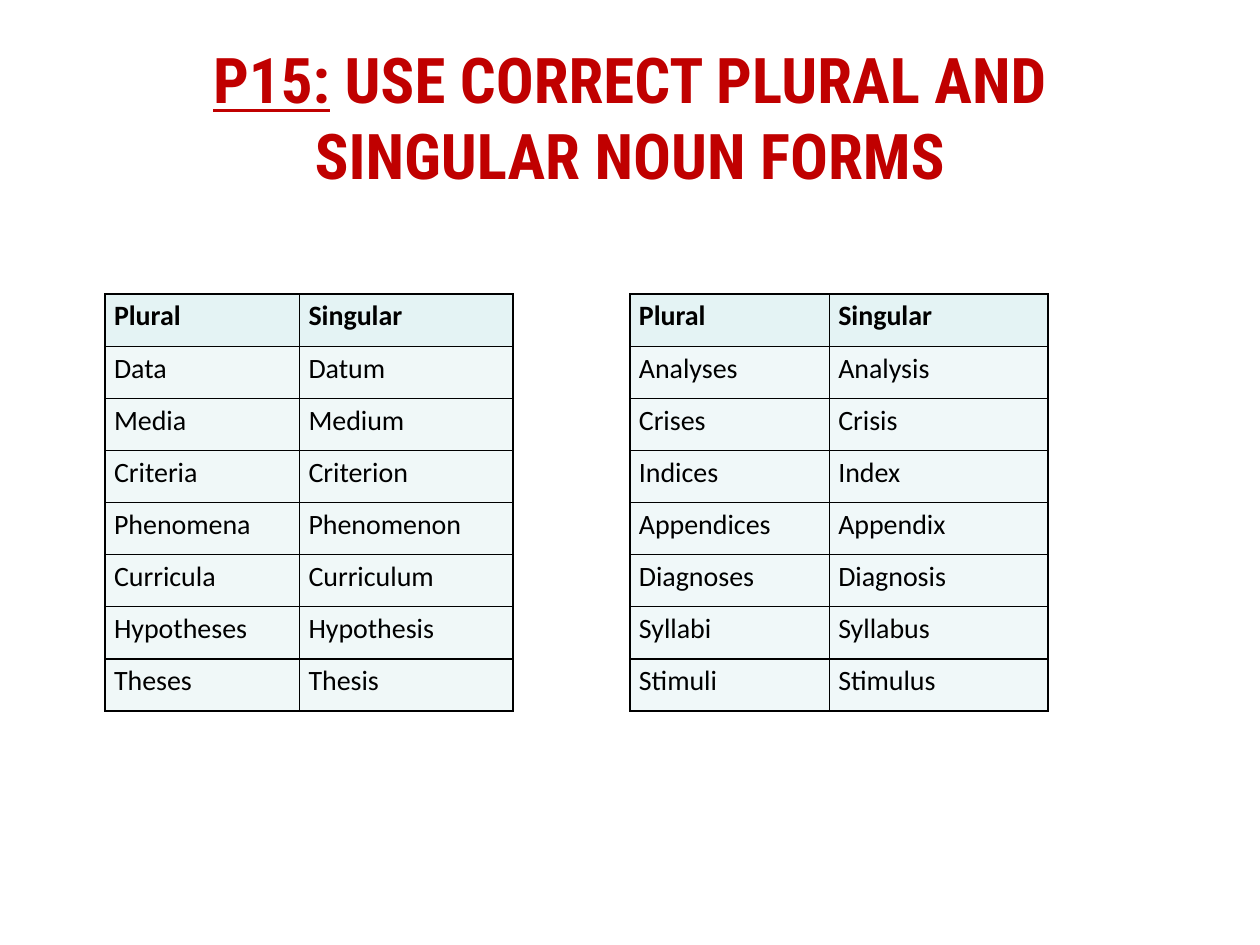
from lxml.etree import SubElement
from pptx import Presentation
from pptx.dml.color import RGBColor as RGB
from pptx.enum.text import MSO_ANCHOR as Anchor, PP_ALIGN as Align
from pptx.oxml.ns import qn
from pptx.util import Cm, Pt

COLORS = {"title": "C00000", "text": "000000", "border": "000000",
          "header": "E4F3F4", "body": "BBE0E3"}
LEFT_NOUNS = [("Data", "Datum"), ("Media", "Medium"), ("Criteria", "Criterion"),
              ("Phenomena", "Phenomenon"), ("Curricula", "Curriculum"),
              ("Hypotheses", "Hypothesis"), ("Theses", "Thesis")]
RIGHT_NOUNS = [("Analyses", "Analysis"), ("Crises", "Crisis"), ("Indices", "Index"),
               ("Appendices", "Appendix"), ("Diagnoses", "Diagnosis"),
               ("Syllabi", "Syllabus"), ("Stimuli", "Stimulus")]


def style_font(font, name, size, color, bold):
    """Set the typeface, size, colour and weight of a font."""
    font.name, font.size, font.bold = name, Pt(size), bold
    font.color.rgb = RGB.from_string(COLORS[color])


def add_borders(cell):
    """Draw a one-point line on all four sides of a cell."""
    tcPr = cell._tc.get_or_add_tcPr()
    for i, side in enumerate(("lnL", "lnR", "lnT", "lnB")):
        ln = SubElement(tcPr, qn(f"a:{side}"), w=str(Pt(1)))
        fill = SubElement(ln, qn("a:solidFill"))
        SubElement(fill, qn("a:srgbClr"), val=COLORS["border"])
        tcPr.insert(i, ln)


def fill_cell(cell, color, opacity):
    """Fill a cell with a colour at an opacity given in percent."""
    cell.fill.solid()
    cell.fill.fore_color.rgb = RGB.from_string(COLORS[color])
    if opacity < 100:
        clr = cell._tc.tcPr.find(qn("a:solidFill")).find(qn("a:srgbClr"))
        SubElement(clr, qn("a:alpha"), val=str(opacity * 1000))


def add_title(s, x, y, w, h, label, text):
    """Place the centred title with its underlined label."""
    tf = s.shapes.add_textbox(Cm(x), Cm(y), Cm(w), Cm(h)).text_frame
    tf.word_wrap = True
    tf.vertical_anchor = Anchor.MIDDLE
    p = tf.paragraphs[0]
    p.alignment = Align.CENTER
    for part, underline in ((label, True), (text, False)):
        r = p.add_run()
        r.text = part
        style_font(r.font, "Roboto Condensed", 36, "title", True)
        r.font.underline = underline


def add_noun_table(s, x, y, widths, row_h, nouns, opacity):
    """Place a table of plural and singular nouns under a header row."""
    rows = [("Plural", "Singular"), *nouns]
    frame = s.shapes.add_table(len(rows), len(widths), Cm(x), Cm(y),
                               Cm(sum(widths)), Cm(row_h * len(rows)))
    table = frame.table
    for col, width in zip(table.columns, widths):
        col.width = Cm(width)
    for i, words in enumerate(rows):
        table.rows[i].height = Cm(row_h)
        for j, word in enumerate(words):
            cell = table.cell(i, j)
            cell.margin_left = cell.margin_right = Cm(0.18)
            cell.margin_top = cell.margin_bottom = 0
            p = cell.text_frame.paragraphs[0]
            p.text = word
            p.alignment = Align.JUSTIFY
            p.line_spacing = 1.15
            p.space_after = Pt(10)
            style_font(p.runs[0].font, "Calibri", 16, "text", i == 0)
            fill_cell(cell, *(("body", opacity) if i else ("header", 100)))
            add_borders(cell)


def main():
    """Build the slide and save it."""
    prs = Presentation()
    prs.slide_width, prs.slide_height = Cm(25.4), Cm(19.05)
    s = prs.slides.add_slide(prs.slide_layouts[6])
    add_title(s, 1.27, 0.76, 22.86, 3.18, "P15:",
              " USE CORRECT PLURAL AND SINGULAR NOUN FORMS")
    add_noun_table(s, 2.12, 5.93, (3.92, 4.3), 1.05, LEFT_NOUNS, 22)
    add_noun_table(s, 12.7, 5.93, (4.02, 4.41), 1.05, RIGHT_NOUNS, 21)
    prs.save("out.pptx")


if __name__ == "__main__":
    main()
